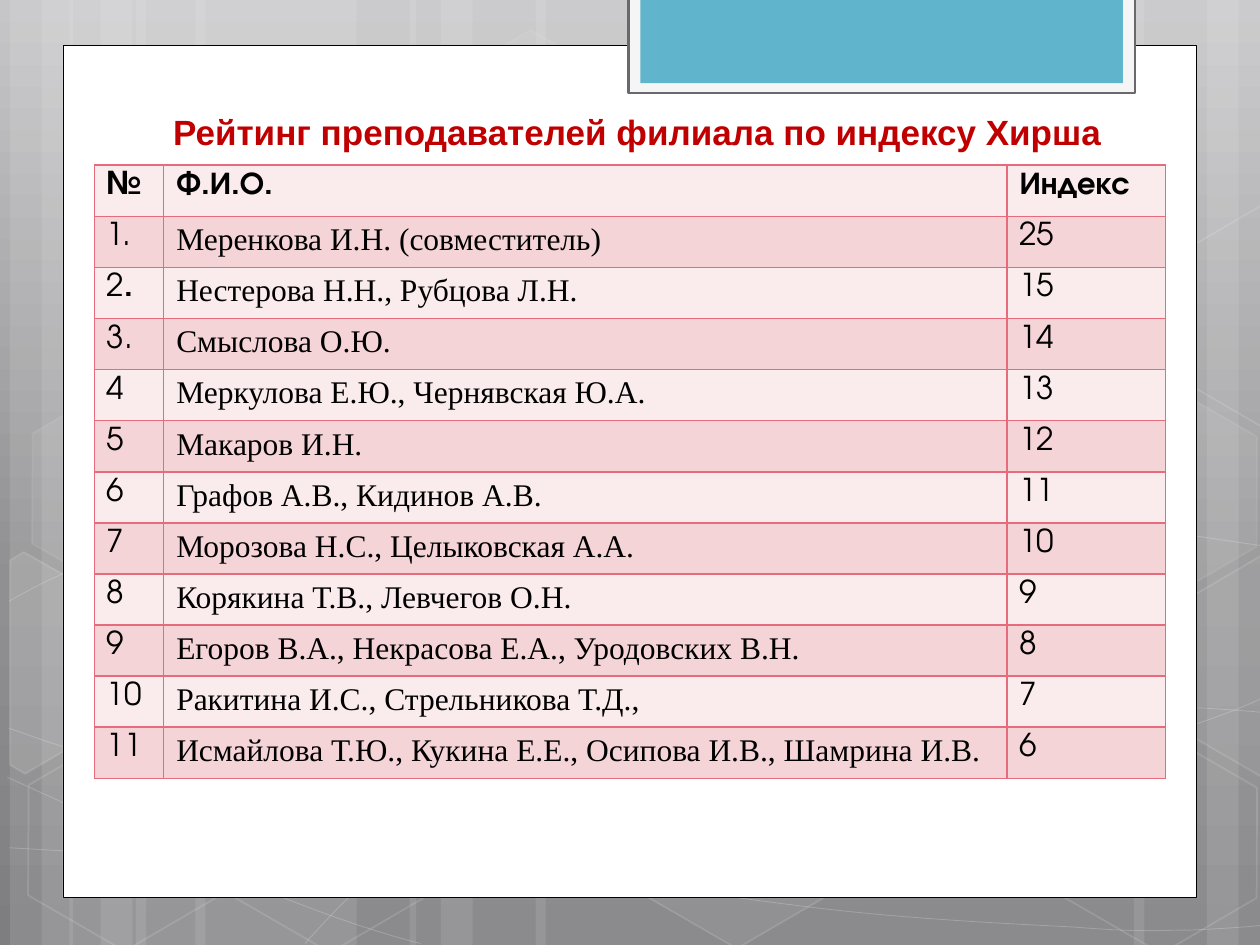
"""Builds a slide that ranks the teachers of a branch by Hirsch index."""
from copy import deepcopy
from dataclasses import dataclass

from lxml.etree import SubElement
from pptx import Presentation
from pptx.dml.color import RGBColor
from pptx.enum.shapes import MSO_SHAPE
from pptx.enum.text import MSO_ANCHOR, PP_ALIGN
from pptx.oxml.ns import qn
from pptx.util import Cm, Pt


@dataclass(frozen=True)
class Theme:
    backdrop: tuple = ((0, "C6C6C8"), (0.62, "909092"), (1, "7E7E81"))
    white: str = "FFFFFF"
    black: str = "000000"
    tab_frame: str = "F5F5F5"
    tab_edge: str = "68686D"
    tab: str = "60B5CC"
    title: str = "C00000"
    grid: str = "E66C7D"
    stripes: tuple = ("FAEBEC", "F5D4D7")
    title_font: str = "Arial"
    number_font: str = "TeX Gyre Adventor"
    name_font: str = "Times New Roman"
    title_size: int = 20
    table_size: int = 18


BANDS = (
    (2.74, 4.45), (0.2, 1.27), (0.84, 2.11), (3.94, 4.45), (1.4, 1.27), (2.03, 2.11),
    (18.62, 4.45), (24.33, 1.27), (22.86, 2.11), (10.8, 7.82), (8.26, 1.27), (8.89, 2.11),
)
CURVES = (
    ((0.18, 17.09), (1.55, 17.17), (2.92, 17.25), (4.83, 17.22), (6.73, 17.2), (9.09, 17.15),
     (11.63, 16.89), (14.17, 16.64), (17.78, 16.15), (20.12, 15.67), (22.43, 15.19),
     (24.82, 14.43), (25.58, 14)),
    ((0.18, 12.12), (0.91, 11.71), (1.65, 11.33), (3.07, 10.95), (4.52, 10.57), (6.58, 10.01),
     (8.81, 9.83), (11.07, 9.65), (13.82, 9.63), (16.61, 9.83), (19.41, 10.03),
     (24.05, 10.82), (25.58, 11.02)),
    ((0.15, 15.67), (3.23, 17.07), (6.27, 18.47), (8.48, 19.02)),
    ((0.18, 14.68), (0.97, 14.96), (1.78, 15.24), (3.25, 15.65), (4.72, 16.03), (6.93, 16.66),
     (9.07, 17.09), (11.18, 17.53), (13.84, 17.98), (15.95, 18.24), (18.06, 18.52),
     (20.32, 18.62), (21.67, 18.69), (22.99, 18.8), (23.34, 18.75), (24, 18.75),
     (24.66, 18.72), (25.12, 18.69), (25.58, 18.64)),
    ((6.15, 19.02), (6.6, 18.52), (7.06, 18.01), (7.67, 17.55), (8.28, 17.09), (9.14, 16.59),
     (9.86, 16.23), (10.57, 15.88), (11, 15.72), (11.94, 15.47), (12.85, 15.19),
     (14.55, 14.86), (15.44, 14.68), (16.36, 14.5), (16.48, 14.5), (17.27, 14.45),
     (18.08, 14.38), (19.3, 14.3), (20.17, 14.27), (21.06, 14.25), (22.5, 14.27),
     (22.5, 14.27), (22.5, 14.27), (24.21, 14.27), (24.21, 14.27), (24.66, 14.3),
     (25.1, 14.33), (25.32, 14.35), (25.55, 14.38), (25.48, 14.35), (25.55, 14.38)),
)
HEXAGONS = (
    (8.48, 0.91, 4, 8), (12.62, 14.96, 6, 12), (0.28, 15.01, None, 12), (0.36, 7.92, 7, 8),
    (4.42, 15.04, None, 12), (19.13, 11.51, 10, 12), (21.18, 15.06, None, 12),
    (21.18, 7.98, 7, 8),
)
CUT_HEXAGONS = (
    (((0.2, 11.3), (0.48, 11.13), (2.44, 12.24), (2.41, 14.48), (0.51, 15.6), (0.2, 15.42)), 10),
    (((23.52, 12.32), (25.43, 11.2), (25.63, 11.33), (25.63, 15.57), (25.45, 15.67),
      (23.52, 14.55)), 4),
    (((23.52, 5.26), (25.43, 4.14), (25.65, 4.27), (25.63, 8.51), (25.45, 8.61),
      (23.52, 7.49)), None),
)
HEADER = ("№", "Ф.И.О.", "Индекс")
RATING = (
    ("1.", "Меренкова И.Н. (совместитель)", "25"),
    ("2.", "Нестерова Н.Н., Рубцова Л.Н.", "15"),
    ("3.", "Смыслова О.Ю.", "14"),
    ("4", "Меркулова Е.Ю., Чернявская Ю.А.", "13"),
    ("5", "Макаров И.Н.", "12"),
    ("6", "Графов А.В., Кидинов А.В.", "11"),
    ("7", "Морозова Н.С., Целыковская А.А.", "10"),
    ("8", "Корякина Т.В., Левчегов О.Н.", "9"),
    ("9", "Егоров В.А., Некрасова Е.А., Уродовских В.Н.", "8"),
    ("10", "Ракитина И.С., Стрельникова Т.Д.,", "7"),
    ("11", "Исмайлова Т.Ю., Кукина Е.Е., Осипова И.В., Шамрина И.В.", "6"),
)


def write(para, text, *, font, size, color, bold=False):
    span = para.add_run()
    span.text = text
    span.font.name, span.font.size, span.font.bold = font, Pt(size), bold
    span.font.color.rgb = RGBColor.from_string(color)


def paint(fill, color, opacity=100):
    fill.solid()
    fill.fore_color.rgb = RGBColor.from_string(color)
    if opacity < 100:
        tint = fill._xPr.find(".//" + qn("a:srgbClr"))
        SubElement(tint, qn("a:alpha"), val=str(opacity * 1000))


def bend(shape):
    segments = shape._element.findall(".//" + qn("a:lnTo"))
    outline = segments[0].getparent()
    for index in range(0, len(segments), 3):
        curve = SubElement(outline, qn("a:cubicBezTo"))
        for segment in segments[index:index + 3]:
            curve.append(segment[0])
            outline.remove(segment)


class Painter:
    def __init__(self, page, theme):
        self.page, self.theme = page, theme

    def backdrop(self):
        fill = self.page.background.fill
        fill.gradient()
        fill.gradient_angle = 270
        stops = self.page.element.find(".//" + qn("a:gsLst"))
        stops.append(deepcopy(stops[-1]))
        for stop, (position, color) in zip(fill.gradient_stops, self.theme.backdrop):
            stop.position = position
            stop.color.rgb = RGBColor.from_string(color)

    def finish(self, shape, fill, line, width, opacity, line_opacity):
        shape.shadow.inherit = False
        if fill:
            paint(shape.fill, fill, opacity)
        else:
            shape.fill.background()
        if line:
            paint(shape.line.fill, line, line_opacity)
            shape.line.width = Pt(width)
        else:
            shape.line.fill.background()
        return shape

    def shape(self, left, top, width, height, *, kind=MSO_SHAPE.RECTANGLE, fill=None,
              line=None, weight=1, opacity=100, line_opacity=100):
        box = self.page.shapes.add_shape(kind, Cm(left), Cm(top), Cm(width), Cm(height))
        return self.finish(box, fill, line, weight, opacity, line_opacity)

    def outline(self, points, *, closed=False, fill=None, weight=1, opacity=100,
                line_opacity=100):
        start, *rest = [(Cm(x), Cm(y)) for x, y in points]
        builder = self.page.shapes.build_freeform(*start)
        builder.add_line_segments(rest, close=closed)
        return self.finish(builder.convert_to_shape(), fill, self.theme.white, weight, opacity,
                           line_opacity)

    def curve(self, points):
        bend(self.outline(points, weight=0.5, line_opacity=20))

    def hexagon(self, left, top, opacity, line_opacity):
        white = self.theme.white
        box = self.shape(left, top, 4.45, 3.86, kind=MSO_SHAPE.HEXAGON,
                         fill=white if opacity else None, line=white,
                         opacity=opacity or 100, line_opacity=line_opacity)
        box.adjustments[0] = 0.285
        box.rotation = 30

    def title(self, text, left, top, width, height):
        frame = self.page.shapes.add_textbox(Cm(left), Cm(top), Cm(width), Cm(height)).text_frame
        frame.word_wrap = True
        frame.vertical_anchor = MSO_ANCHOR.BOTTOM
        para = frame.paragraphs[0]
        para.alignment = PP_ALIGN.CENTER
        write(para, text, font=self.theme.title_font, size=self.theme.title_size,
              color=self.theme.title, bold=True)

    def cell(self, cell, text, *, stripe, font, bold):
        for edge in ("a:lnL", "a:lnR", "a:lnT", "a:lnB"):
            line = SubElement(cell._tc.get_or_add_tcPr(), qn(edge), w=str(Pt(1)))
            SubElement(SubElement(line, qn("a:solidFill")), qn("a:srgbClr"), val=self.theme.grid)
        paint(cell.fill, stripe)
        pieces = [("2", False), (".", True)] if text == "2." else [(text, bold)]
        for piece, heavy in pieces:
            write(cell.text_frame.paragraphs[0], piece, font=font,
                  size=self.theme.table_size, color=self.theme.black, bold=heavy)

    def table(self, rows, left, top, widths, row_height):
        table = self.page.shapes.add_table(
            len(rows), len(widths), Cm(left), Cm(top), Cm(sum(widths)),
            Cm(row_height * len(rows))).table
        table.first_row = table.horz_banding = False
        for column, width in zip(table.columns, widths):
            column.width = Cm(width)
        for r, values in enumerate(rows):
            table.rows[r].height = Cm(row_height)
            for c, text in enumerate(values):
                is_name = r > 0 and c == 1
                self.cell(table.cell(r, c), text, stripe=self.theme.stripes[r % 2],
                          font=self.theme.name_font if is_name else self.theme.number_font,
                          bold=r == 0)


def main():
    deck = Presentation()
    deck.slide_width, deck.slide_height = Cm(25.4), Cm(19.05)
    theme = Theme()
    painter = Painter(deck.slides.add_slide(deck.slide_layouts[6]), theme)
    painter.backdrop()
    for left, width in BANDS:
        painter.shape(left, 0, width, 19.05, fill=theme.white, opacity=10)
    for points in CURVES:
        painter.curve(points)
    for hexagon in HEXAGONS:
        painter.hexagon(*hexagon)
    for points, opacity in CUT_HEXAGONS:
        painter.outline(points, closed=True, fill=theme.white if opacity else None,
                        opacity=opacity or 100, line_opacity=12)
    painter.shape(1.27, 0.91, 22.86, 17.19, fill=theme.white, line=theme.black, weight=0.5)
    painter.shape(12.67, -0.05, 10.21, 1.93, fill=theme.tab_frame, line=theme.tab_edge,
                  weight=1.25)
    painter.shape(12.91, -0.05, 9.73, 1.73, fill=theme.tab)
    painter.title("Рейтинг преподавателей филиала по индексу Хирша", 3.1, 1.93, 19.5, 1.27)
    painter.table((HEADER, *RATING), 1.9, 3.33, (1.4, 17, 3.2), 1.03)
    deck.save("out.pptx")


if __name__ == "__main__":
    main()
